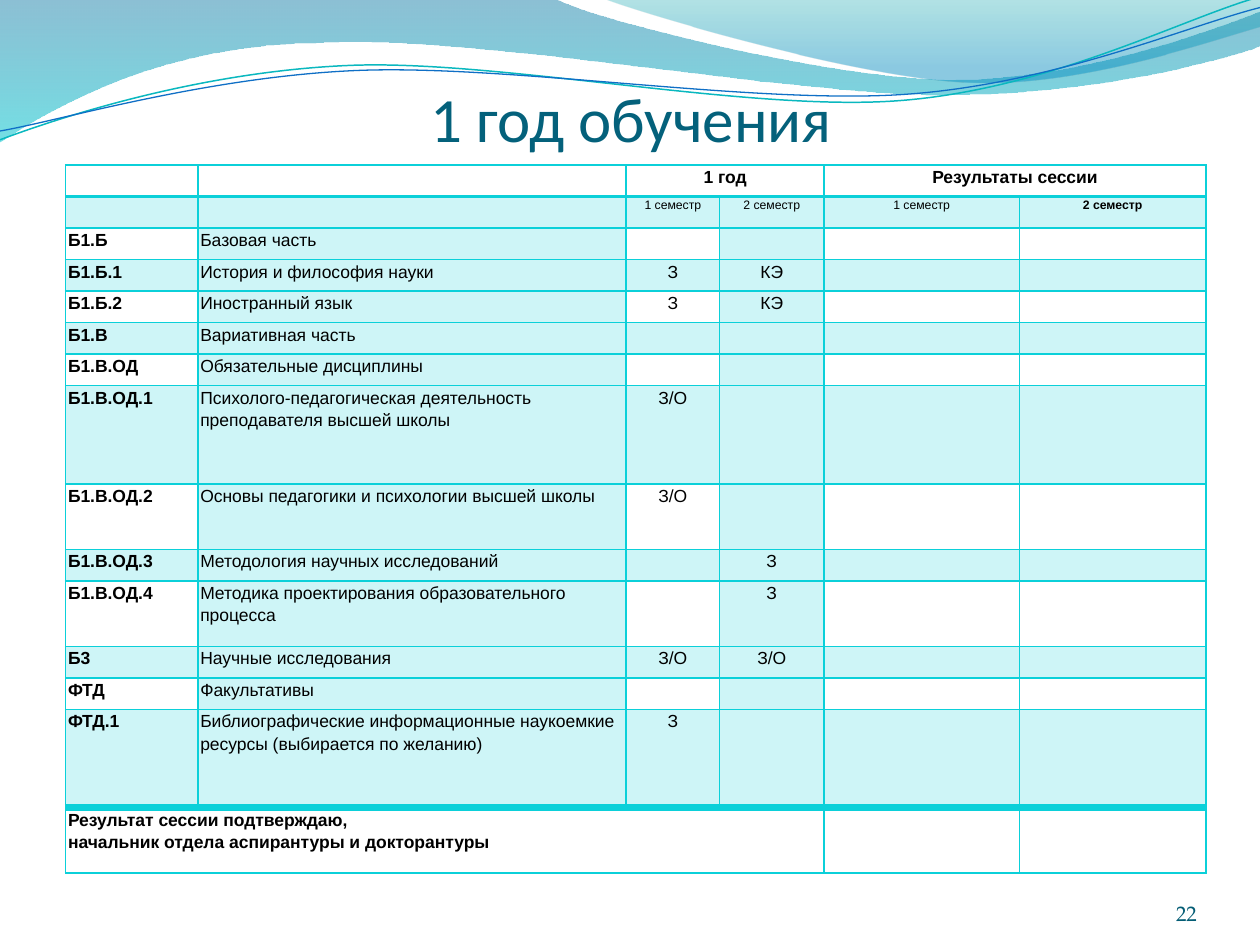
from lxml.etree import SubElement
from pptx import Presentation
from pptx.dml.color import RGBColor
from pptx.enum.text import MSO_ANCHOR, PP_ALIGN
from pptx.oxml.ns import qn
from pptx.util import Inches, Pt

TITLE = RGBColor(0x04, 0x61, 0x7B)
NUMBER = RGBColor(0x04, 0x5D, 0x75)
BLACK = RGBColor(0, 0, 0)
ACCENT = RGBColor(0x0B, 0xD0, 0xD9)
TEAL_LINE = RGBColor(0x0A, 0xB8, 0xBF)
BLUE_LINE = RGBColor(0x0F, 0x6F, 0xC6)
LEFT_TOP = RGBColor(0x00, 0x74, 0xA1)
LEFT_BOTTOM = RGBColor(0x00, 0xC6, 0xCF)
RIGHT_TOP = RGBColor(0x00, 0xA1, 0xA9)
RIGHT_BOTTOM = RGBColor(0x00, 0x8B, 0xBF)

LEFT_WAVE = [
    (0, -0.01), (4.4, -0.01),
    (4.76, 0.17, 6.64, 0.63, 7.58, 0.63), (8.53, 0.63, 9.58, 0.26, 10, 0.09),
    (10.01, 0.36),
    (9.83, 0.44, 8.7, 0.76, 7.46, 0.75), (6.22, 0.75, 3.82, 0.28, 2.57, 0.34),
    (1.29, 0.35, 0.46, 0.83, -0.01, 1.13),
]
RIGHT_WAVE = [
    (4.79, -0.01),
    (5.09, 0.11, 6.82, 0.62, 7.69, 0.65), (8.56, 0.69, 9.61, 0.32, 10, 0.21),
    (10, 0),
]
TEAL_CURVE = [
    (0, 1.11), (0.48, 0.93, 1.58, 0.57, 2.77, 0.52),
    (3.95, 0.47, 5.93, 0.89, 7.13, 0.8), (8.33, 0.71, 9.38, 0.15, 9.98, -0.02),
]
BLUE_CURVE = [
    (0, 1.04), (0.47, 0.96, 1.64, 0.61, 2.83, 0.56),
    (4.03, 0.51, 5.97, 0.83, 7.17, 0.75), (8.36, 0.67, 9.41, 0.21, 10, 0.06),
]

COLUMNS = [1.05, 3.4, 0.74, 0.83, 1.55, 1.48]
ROW, MEDIUM_ROW, TALL_ROW = 0.25, 0.52, 0.78
ROWS = [
    (ROW, "", "", "1 год", "", "Результаты сессии"),
    (ROW, "", "", "1 семестр", "2 семестр", "1 семестр", "2 семестр"),
    (ROW, "Б1.Б", "Базовая часть"),
    (ROW, "Б1.Б.1", "История и философия науки", "З", "КЭ"),
    (ROW, "Б1.Б.2", "Иностранный язык", "З", "КЭ"),
    (ROW, "Б1.В", "Вариативная часть"),
    (ROW, "Б1.В.ОД", "Обязательные дисциплины"),
    (TALL_ROW, "Б1.В.ОД.1",
     "Психолого-педагогическая деятельность преподавателя высшей школы", "З/О"),
    (MEDIUM_ROW, "Б1.В.ОД.2", "Основы педагогики и психологии высшей школы", "З/О"),
    (ROW, "Б1.В.ОД.3", "Методология научных исследований", "", "З"),
    (MEDIUM_ROW, "Б1.В.ОД.4",
     "Методика проектирования образовательного процесса", "", "З"),
    (ROW, "Б3", "Научные исследования", "З/О", "З/О"),
    (ROW, "ФТД", "Факультативы"),
    (TALL_ROW, "ФТД.1",
     "Библиографические информационные наукоемкие ресурсы (выбирается по желанию)", "З"),
    (MEDIUM_ROW,
     "Результат сессии подтверждаю,\nначальник отдела аспирантуры и докторантуры"),
]
LAST = len(ROWS) - 1
MERGES = [(0, 2, 3), (0, 4, 5), (LAST, 0, 3)]


def bend(sp, line, controls):
    """Turn a line segment into a cubic Bezier with the given control points."""
    line.tag = qn("a:cubicBezTo")
    end = line[0]
    for x, y in (controls[:2], controls[2:]):
        pt = SubElement(line, qn("a:pt"))
        pt.set("x", str(Inches(x) - sp.left))
        pt.set("y", str(Inches(y) - sp.top))
    line.append(end)


def add_outline(s, segments, close):
    """Add a freeform of straight and curved segments."""
    points = [(Inches(seg[-2]), Inches(seg[-1])) for seg in segments]
    builder = s.shapes.build_freeform(*points[0])
    builder.add_line_segments(points[1:], close=close)
    sp = builder.convert_to_shape()
    sp.shadow.inherit = False
    lines = list(sp._element.iter(qn("a:lnTo")))
    for line, seg in zip(lines, segments[1:]):
        if len(seg) == 6:
            bend(sp, line, seg[:4])
    return sp


def set_alpha(color_element, percent):
    """Give a colour element an opacity."""
    SubElement(color_element, qn("a:alpha")).set("val", str(percent * 1000))


def add_wave(s, segments, stops):
    """Add a filled wave with a translucent vertical gradient."""
    sp = add_outline(s, segments, True)
    sp.line.fill.background()
    sp.fill.gradient()
    sp.fill.gradient_angle = 270
    for stop, (position, color, _) in zip(sp.fill.gradient_stops, stops):
        stop.position = position
        stop.color.rgb = color
    for gs, (_, _, opacity) in zip(sp._element.iter(qn("a:gs")), stops):
        set_alpha(gs[0], opacity)


def add_curve(s, segments, color, width):
    """Add an open curved line."""
    sp = add_outline(s, segments, False)
    sp.fill.background()
    sp.line.color.rgb = color
    sp.line.width = Pt(width)


def format_runs(p, font, size, color, bold=False):
    """Format every run of a paragraph."""
    for r in p.runs:
        r.font.name = font
        r.font.size = Pt(size)
        r.font.color.rgb = color
        r.font.bold = bold


def add_text(s, text, box, align, font, size, color):
    """Add a bottom-anchored line of text."""
    tf = s.shapes.add_textbox(*map(Inches, box)).text_frame
    tf.word_wrap = True
    tf.vertical_anchor = MSO_ANCHOR.BOTTOM
    tf.margin_left = tf.margin_right = tf.margin_top = tf.margin_bottom = 0
    tf.text = text
    p = tf.paragraphs[0]
    p.alignment = align
    format_runs(p, font, size, color)


def set_borders(cell, top, bottom):
    """Draw the four borders of a cell."""
    tcPr = cell._tc.get_or_add_tcPr()
    for side, width in (("L", 1), ("R", 1), ("T", top), ("B", bottom)):
        ln = SubElement(tcPr, qn(f"a:ln{side}"), w=str(Pt(width)))
        fill = SubElement(ln, qn("a:solidFill"))
        SubElement(fill, qn("a:srgbClr"), val=str(ACCENT))


def fill_cell(cell, tinted):
    """Tint a cell or leave it clear."""
    if not tinted:
        cell.fill.background()
        return
    cell.fill.solid()
    cell.fill.fore_color.rgb = ACCENT
    set_alpha(cell._tc.tcPr.find(qn("a:solidFill"))[0], 20)


def write_cell(cell, text, row, col):
    """Write and format the text of a cell."""
    centred = row < 2 or col > 1
    cell.margin_left = cell.margin_right = Inches(0.07 if centred else 0.02)
    cell.margin_top = cell.margin_bottom = 0
    cell.text_frame.text = text
    size = 7 if row == 1 else 10
    bold = row == 0 or col == 0 or (row, col) == (1, 5)
    for p in cell.text_frame.paragraphs:
        p.alignment = PP_ALIGN.CENTER if centred else PP_ALIGN.LEFT
        p.line_spacing = 1.15
        format_runs(p, "Arial", size, BLACK, bold)
        if not text:
            p._p.get_or_add_endParaRPr().set("sz", str(size * 100))


def add_plan_table(s):
    """Add the table of courses and session results."""
    table = s.shapes.add_table(len(ROWS), len(COLUMNS), Inches(0.52), Inches(1.31),
                               Inches(sum(COLUMNS)), Inches(5.62)).table
    table.first_row = table.horz_banding = False
    for column, width in zip(table.columns, COLUMNS):
        column.width = Inches(width)
    for row, (height, *texts) in enumerate(ROWS):
        table.rows[row].height = Inches(height)
        top = {1: 2, LAST: 4}.get(row, 1)
        bottom = {0: 2, LAST - 1: 4}.get(row, 1)
        for col in range(len(COLUMNS)):
            cell = table.cell(row, col)
            set_borders(cell, top, bottom)
            fill_cell(cell, 0 < row < LAST and (row % 2 == 1 or col in (1, 3)))
            write_cell(cell, texts[col] if col < len(texts) else "", row, col)
    for row, first, last in MERGES:
        table.cell(row, first).merge(table.cell(row, last))


def main():
    """Build and save the slide."""
    prs = Presentation()
    prs.slide_width, prs.slide_height = Inches(10), Inches(7.5)
    s = prs.slides.add_slide(prs.slide_layouts[6])
    add_wave(s, LEFT_WAVE, [(0, LEFT_TOP, 45), (1, LEFT_BOTTOM, 55)])
    add_wave(s, RIGHT_WAVE, [(0, RIGHT_TOP, 30), (0.8, RIGHT_BOTTOM, 45)])
    add_curve(s, TEAL_CURVE, TEAL_LINE, 0.85)
    add_curve(s, BLUE_CURVE, BLUE_LINE, 0.75)
    add_text(s, "1 год обучения", (0.51, 0.44, 9, 0.79), PP_ALIGN.CENTER,
             "Calibri", 36, TITLE)
    add_text(s, "22", (8.67, 6.95, 0.83, 0.4), PP_ALIGN.RIGHT,
             "TeX Gyre Pagella", 12, NUMBER)
    add_plan_table(s)
    prs.save("out.pptx")


if __name__ == "__main__":
    main()
